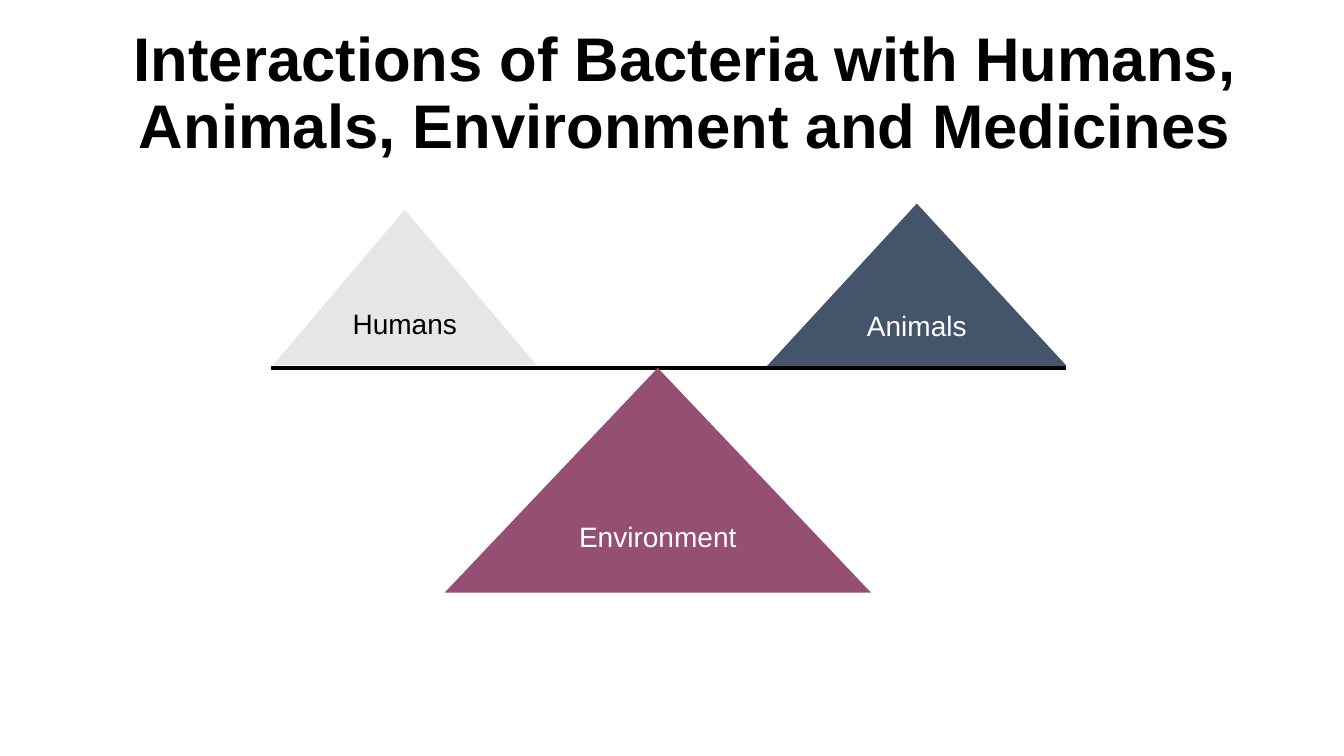
from pptx import Presentation
from pptx.dml.color import RGBColor
from pptx.enum.shapes import MSO_CONNECTOR as Connector, MSO_SHAPE as Shape
from pptx.enum.text import MSO_ANCHOR as Anchor, PP_ALIGN as Align
from pptx.oxml.ns import qn
from pptx.util import Inches, Pt
from lxml.etree import SubElement

BLACK = RGBColor(0x00, 0x00, 0x00)
WHITE = RGBColor(0xFF, 0xFF, 0xFF)
LIGHT_GREY = RGBColor(0xE7, 0xE6, 0xE6)
SLATE = RGBColor(0x44, 0x54, 0x6A)
PLUM = RGBColor(0x95, 0x4F, 0x72)

SLIDE_WIDTH, SLIDE_HEIGHT = Inches(13.33), Inches(7.5)
COLUMN, ROW = SLIDE_WIDTH / 100, SLIDE_HEIGHT / 100
BEAM_ROW = 48.67

PARTNERS = (
    ("Humans", (20.33, 27.73, 19.58, 20.53), LIGHT_GREY, BLACK, True, 0.8),
    ("Environment", (33.08, BEAM_ROW, 31.73, 29.73), PLUM, WHITE, False, 1.0),
    ("Animals", (57.08, 26.93, 22.28, 21.47), SLATE, WHITE, False, 1.0),
)


def on_grid(left, top, width, height):
    return (round(left * COLUMN), round(top * ROW),
            round(width * COLUMN), round(height * ROW))


def apply_format(target, values):
    for attribute, value in values.items():
        setattr(target, attribute, value)


def write(holder, wording, size, color, spacing, bold=False, wrap=True):
    frame = holder.text_frame
    frame.text = wording
    apply_format(frame, {"word_wrap": wrap, "vertical_anchor": Anchor.MIDDLE})
    paragraph = frame.paragraphs[0]
    apply_format(paragraph, {"alignment": Align.CENTER, "line_spacing": spacing})
    font = paragraph.runs[0].font
    apply_format(font, {"name": "Arial", "size": Pt(size), "bold": bold})
    font.color.rgb = color


def add_heading(slide, wording):
    heading = slide.shapes.title
    place = on_grid(3.38, 3.07, 95.25, 19.07)
    apply_format(heading, dict(zip(("left", "top", "width", "height"), place)))
    write(heading, wording, 44, BLACK, 0.9, bold=True)


def add_beam(slide, start, end):
    left, top, length, _ = on_grid(start, BEAM_ROW, end - start, 0)
    beam = slide.shapes.add_connector(
        Connector.STRAIGHT, left, top, left + length, top)
    beam.line.color.rgb = BLACK
    beam.line.width = Pt(2.75)
    SubElement(beam._element.spPr, qn("a:effectLst"))


def add_partner(slide, wording, place, fill, color, wrap, spacing):
    triangle = slide.shapes.add_shape(Shape.ISOSCELES_TRIANGLE, *on_grid(*place))
    triangle.shadow.inherit = False
    triangle.fill.solid()
    triangle.fill.fore_color.rgb = fill
    triangle.line.fill.background()
    write(triangle, wording, 20, color, spacing, wrap=wrap)


def main():
    deck = Presentation()
    apply_format(deck, {"slide_width": SLIDE_WIDTH, "slide_height": SLIDE_HEIGHT})
    slide = deck.slides.add_slide(deck.slide_layouts[5])
    add_heading(slide, "Interactions of Bacteria with Humans, "
                       "Animals, Environment and Medicines")
    add_beam(slide, 20.18, 79.35)
    for partner in PARTNERS:
        add_partner(slide, *partner)
    deck.save("out.pptx")


if __name__ == "__main__":
    main()
